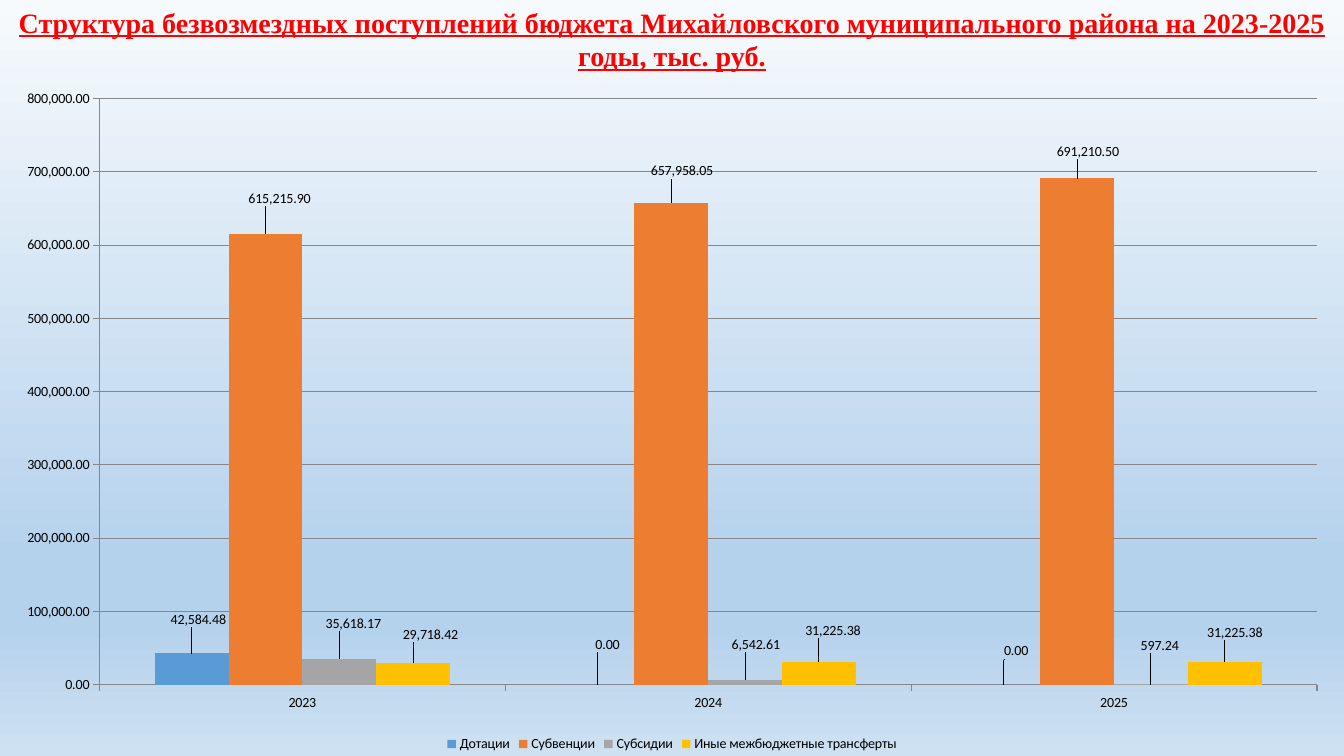
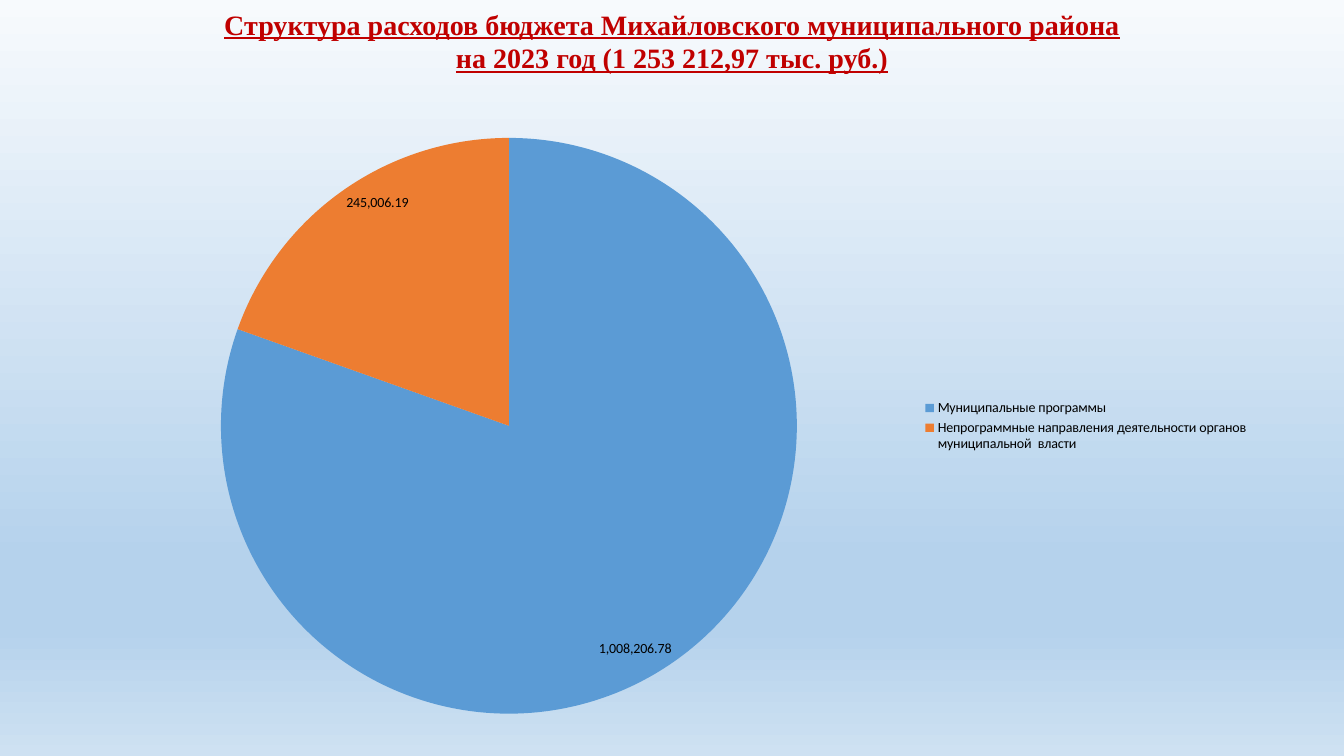
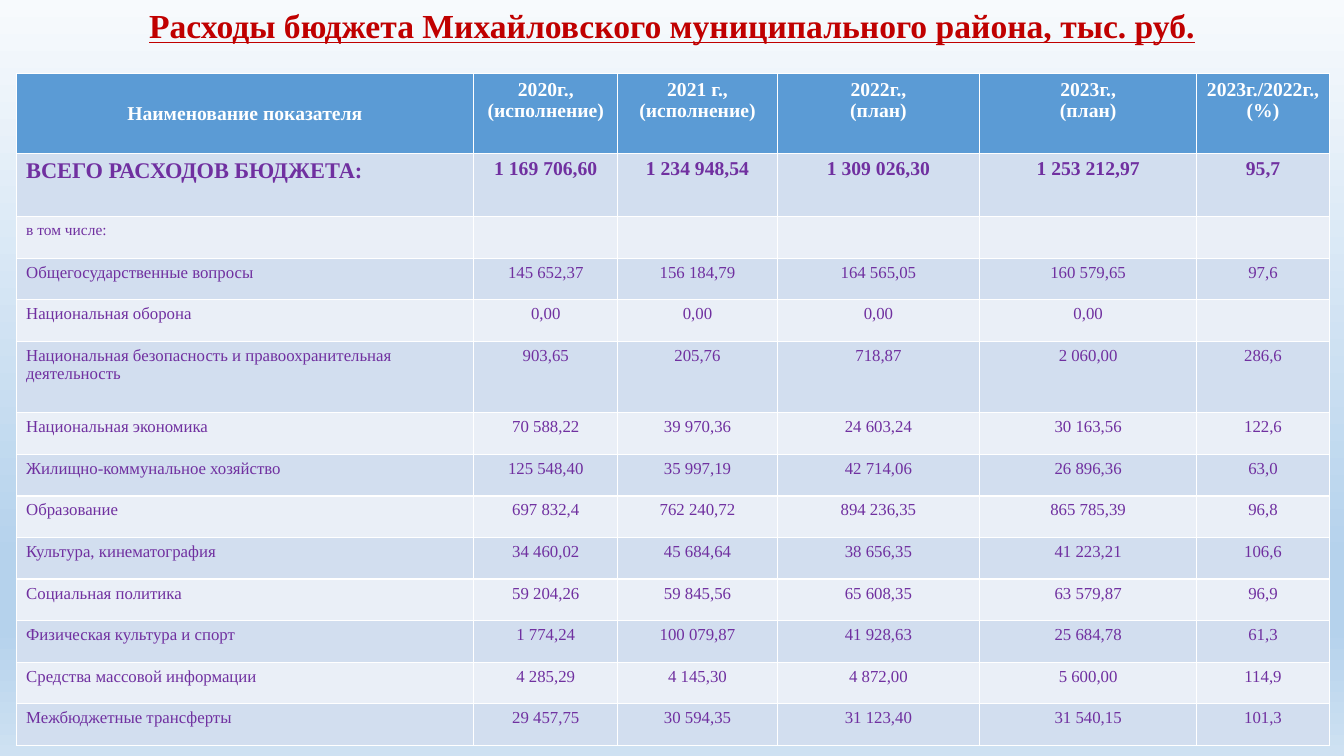
from dataclasses import dataclass
from typing import NamedTuple

from lxml import etree
from pptx import Presentation
from pptx import util as u
from pptx.chart import data as chart_data
from pptx.dml.color import RGBColor
from pptx.enum import chart as ch, text as te
from pptx.oxml import ns

COLORS = {
    "red": "FF0000", "dark_red": "C00000", "purple": "7030A0",
    "white": "FFFFFF", "black": "000000", "grid": "878787",
    "blue": "5B9BD5", "orange": "ED7D31", "gray": "A5A5A5", "gold": "FFC000",
    "band_dark": "D2DEEF", "band_light": "EAEFF7",
}
BACKGROUND = [(0, "F7FAFD"), (74, "B5D2EC"), (83, "B5D2EC"), (100, "CEE1F2")]
SERIF, SANS = "Times New Roman", "Calibri"
MONEY = "#,##0.00"
SLIDE_W, SLIDE_H = u.Inches(13.33), u.Inches(7.5)


class Box(NamedTuple):
    """Place on the slide, in percent of its width and height."""
    x: float
    y: float
    w: float
    h: float

    def emu(self) -> tuple:
        return across(self.x), down(self.y), across(self.w), down(self.h)


@dataclass
class Style:
    size: float
    color: str
    bold: bool = False
    underline: bool = False
    name: str = SERIF


@dataclass
class Bars:
    """One column series; shifts move its labels, in percent of the chart."""
    name: str
    color: str
    values: tuple
    shifts: tuple


SERIES = [
    Bars("Дотации", "blue", (42584.48, 0, 0),
         ((0.5, -3.2), (0.75, -4.1), (0.95, -3.2))),
    Bars("Субвенции", "orange", (615215.9, 657958.05, 691210.5),
         ((1.05, -3.4), (0.8, -2.9), (0.8, -2.2))),
    Bars("Субсидии", "gray", (35618.17, 6542.61, 597.24),
         ((1.05, -3.4), (0.8, -3.4), (0.65, -4))),
    Bars("Иные межбюджетные трансферты", "gold", (29718.42, 31225.38, 31225.38),
         ((1.3, -2.4), (1.05, -2.8), (0.75, -2.5))),
]
SPENDING = {
    "Муниципальные программы": (1008206.78, "blue"),
    "Непрограммные направления деятельности органов муниципальной  власти":
        (245006.19, "orange"),
}
HEADER = ["Наименование показателя", "2020г.,\n(исполнение)",
          "2021 г.,\n(исполнение)", "2022г.,\n(план)", "2023г.,\n(план)",
          "2023г./2022г.,\n(%)"]
ROWS = [line.split("|") for line in (
    "ВСЕГО РАСХОДОВ БЮДЖЕТА:|1 169 706,60|1 234 948,54|1 309 026,30|1 253 212,97|95,7",
    "в том числе:|||||",
    "Общегосударственные вопросы|145 652,37|156 184,79|164 565,05|160 579,65|97,6",
    "Национальная оборона|0,00|0,00|0,00|0,00|",
    "Национальная безопасность и правоохранительная деятельность"
    "|903,65|205,76|718,87|2 060,00|286,6",
    "Национальная экономика|70 588,22|39 970,36|24 603,24|30 163,56|122,6",
    "Жилищно-коммунальное хозяйство|125 548,40|35 997,19|42 714,06|26 896,36|63,0",
    "Образование|697 832,4|762 240,72|894 236,35|865 785,39|96,8",
    "Культура, кинематография|34 460,02|45 684,64|38 656,35|41 223,21|106,6",
    "Социальная политика|59 204,26|59 845,56|65 608,35|63 579,87|96,9",
    "Физическая культура и спорт|1 774,24|100 079,87|41 928,63|25 684,78|61,3",
    "Средства массовой информации|4 285,29|4 145,30|4 872,00|5 600,00|114,9",
    "Межбюджетные трансферты|29 457,75|30 594,35|31 123,40|31 540,15|101,3",
)]
COLUMN_WIDTHS = (34.05, 10.73, 11.85, 15.08, 16.13, 9.9)
ROW_HEIGHT = 5.5
TALL_ROWS = {0: 10.53, 1: 8.4, 5: 9.47}

HEAD = Style(14, "white", bold=True)
TOTAL_NAME = Style(16, "purple", bold=True)
TOTAL = Style(14, "purple", bold=True)
NOTE = Style(11, "purple")
BODY = Style(12, "purple")
CHART_TEXT = Style(10, "black", name=SANS)


def across(percent: float) -> int:
    return int(SLIDE_W * percent / 100)


def down(percent: float) -> int:
    return int(SLIDE_H * percent / 100)


def rgb(name: str) -> RGBColor:
    return RGBColor.from_string(COLORS[name])


def paint(target, color: str) -> None:
    target.fill.solid()
    target.fill.fore_color.rgb = rgb(color)


def apply_font(font, style: Style) -> None:
    font.name, font.size = style.name, u.Pt(style.size)
    font.bold, font.underline = style.bold, style.underline
    font.color.rgb = rgb(style.color)


def write(tf, content: str, style: Style, align) -> None:
    """Put each line of the content in a paragraph of its own."""
    for i, line in enumerate(content.split("\n")):
        p = tf.paragraphs[0] if i == 0 else tf.add_paragraph()
        p.alignment = align
        if line:
            r = p.add_run()
            r.text = line
            apply_font(r.font, style)


def set_background(master) -> None:
    fill = master.background.fill
    fill.gradient()
    fill.gradient_angle = 270
    stops = master.element.xpath("./p:cSld/p:bg//a:gsLst")[0]
    for stop in list(stops):
        stops.remove(stop)
    for position, color in BACKGROUND:
        stop = etree.SubElement(stops, ns.qn("a:gs"), pos=str(position * 1000))
        etree.SubElement(stop, ns.qn("a:srgbClr"), val=color)


def add_titled_slide(prs, title: str, style: Style, box: Box):
    slide = prs.slides.add_slide(prs.slide_layouts[5])
    sp = slide.shapes.title
    sp.left, sp.top, sp.width, sp.height = box.emu()
    tf = sp.text_frame
    tf.word_wrap, tf.auto_size = True, te.MSO_AUTO_SIZE.NONE
    tf.vertical_anchor = te.MSO_ANCHOR.TOP
    write(tf, title, style, te.PP_ALIGN.CENTER)
    return slide


def manual_layout(**values):
    """Make a c:layout whose children come in the given order."""
    layout = etree.Element(ns.qn("c:layout"))
    manual = etree.SubElement(layout, ns.qn("c:manualLayout"))
    for tag, value in values.items():
        etree.SubElement(manual, ns.qn("c:" + tag), val=str(value))
    return layout


def add_chart(slide, kind, box: Box, data, legend_at, plot_box: Box):
    """Add a chart; plot_box is in percent of the chart."""
    chart = slide.shapes.add_chart(kind, *box.emu(), data).chart
    chart.has_title = False
    apply_font(chart.font, CHART_TEXT)
    chart.has_legend = True
    chart.legend.position = legend_at
    chart.legend.include_in_layout = False
    apply_font(chart.legend.font, CHART_TEXT)
    area = chart.element.xpath(".//c:plotArea")[0]
    for old in area.findall(ns.qn("c:layout")):
        area.remove(old)
    sides = {k: round(v / 100, 4) for k, v in plot_box._asdict().items()}
    area.insert(0, manual_layout(layoutTarget="inner", xMode="edge",
                                 yMode="edge", **sides))
    return chart


def format_labels(labels, position) -> None:
    labels.show_value = True
    labels.number_format, labels.number_format_is_linked = MONEY, False
    labels.position = position
    apply_font(labels.font, CHART_TEXT)


def shift_label(point, x: float, y: float) -> None:
    label = point.data_label
    apply_font(label.font, CHART_TEXT)
    label.position = ch.XL_LABEL_POSITION.OUTSIDE_END
    label._dLbl.find(ns.qn("c:idx")).addnext(
        manual_layout(x=round(x / 100, 4), y=round(y / 100, 4)))


def build_transfers(prs) -> None:
    slide = add_titled_slide(
        prs, "Структура безвозмездных поступлений бюджета Михайловского "
        "муниципального района на 2023-2025 годы, тыс. руб.",
        Style(20, "red", True, True), Box(0, 0, 100, 10.27))
    data = chart_data.CategoryChartData(number_format=MONEY)
    data.categories = ["2023", "2024", "2025"]
    for bars in SERIES:
        data.add_series(bars.name, bars.values)
    chart = add_chart(slide, ch.XL_CHART_TYPE.COLUMN_CLUSTERED,
                      Box(0, 10.27, 100, 89.73), data,
                      ch.XL_LEGEND_POSITION.BOTTOM, Box(7.4, 3.1, 90.6, 86.4))
    plot = chart.plots[0]
    plot.gap_width, plot.overlap, plot.vary_by_categories = 150, 0, False
    for axis in (chart.category_axis, chart.value_axis):
        axis.major_tick_mark = ch.XL_TICK_MARK.OUTSIDE
        axis.minor_tick_mark = ch.XL_TICK_MARK.NONE
        axis.format.line.color.rgb = rgb("grid")
        apply_font(axis.tick_labels.font, CHART_TEXT)
    values = chart.value_axis
    values.minimum_scale, values.maximum_scale = 0, 800000
    values.major_unit = 100000
    values.tick_labels.number_format = MONEY
    values.tick_labels.number_format_is_linked = False
    values.has_major_gridlines = True
    values.major_gridlines.format.line.color.rgb = rgb("grid")
    for series, bars in zip(plot.series, SERIES):
        paint(series.format, bars.color)
        format_labels(series.data_labels, ch.XL_LABEL_POSITION.OUTSIDE_END)
        for i, shift in enumerate(bars.shifts):
            shift_label(series.points[i], *shift)


def build_spending(prs) -> None:
    slide = add_titled_slide(
        prs, "Структура расходов бюджета Михайловского муниципального района\n"
        "на 2023 год (1 253 212,97 тыс. руб.)",
        Style(20, "dark_red", True, True), Box(0, 0.27, 100, 10.27))
    data = chart_data.CategoryChartData(number_format=MONEY)
    data.categories = list(SPENDING)
    data.add_series("Расходы", [value for value, _ in SPENDING.values()])
    chart = add_chart(slide, ch.XL_CHART_TYPE.PIE,
                      Box(7.28, 16.4, 86.4, 79.87), data,
                      ch.XL_LEGEND_POSITION.RIGHT, Box(10.6, 2.3, 49.6, 95.4))
    plot = chart.plots[0]
    plot.vary_by_categories = True
    plot.has_data_labels = True
    format_labels(plot.data_labels, ch.XL_LABEL_POSITION.INSIDE_END)
    for i, (_, color) in enumerate(SPENDING.values()):
        paint(plot.series[0].points[i].format, color)


def cell_style(row: int, col: int) -> Style:
    if row == 1 and col == 0:
        return TOTAL_NAME
    return {0: HEAD, 1: TOTAL, 2: NOTE}.get(row, BODY)


def build_table(prs) -> None:
    slide = add_titled_slide(
        prs, "Расходы бюджета Михайловского муниципального района, тыс. руб.",
        Style(24, "dark_red", True, True), Box(0, 0, 100, 6.67))
    lines = [HEADER] + ROWS
    table = slide.shapes.add_table(len(lines), len(HEADER),
                                   *Box(1.2, 9.73, 97.74, 88.8).emu()).table
    for column, width in zip(table.columns, COLUMN_WIDTHS):
        column.width = across(width)
    for i, line in enumerate(lines):
        table.rows[i].height = down(TALL_ROWS.get(i, ROW_HEIGHT))
        band = "blue" if i == 0 else "band_dark" if i % 2 else "band_light"
        for j, content in enumerate(line):
            cell = table.cell(i, j)
            paint(cell, band)
            if j:
                cell.margin_left = cell.margin_right = u.Inches(0.05)
            elif i == 0:
                cell.vertical_anchor = te.MSO_ANCHOR.MIDDLE
            centred = i == 0 or j > 0
            write(cell.text_frame, content, cell_style(i, j),
                  te.PP_ALIGN.CENTER if centred else te.PP_ALIGN.LEFT)


def main() -> None:
    prs = Presentation()
    prs.slide_width, prs.slide_height = SLIDE_W, SLIDE_H
    set_background(prs.slide_master)
    build_transfers(prs)
    build_spending(prs)
    build_table(prs)
    prs.save("out.pptx")


if __name__ == "__main__":
    main()
